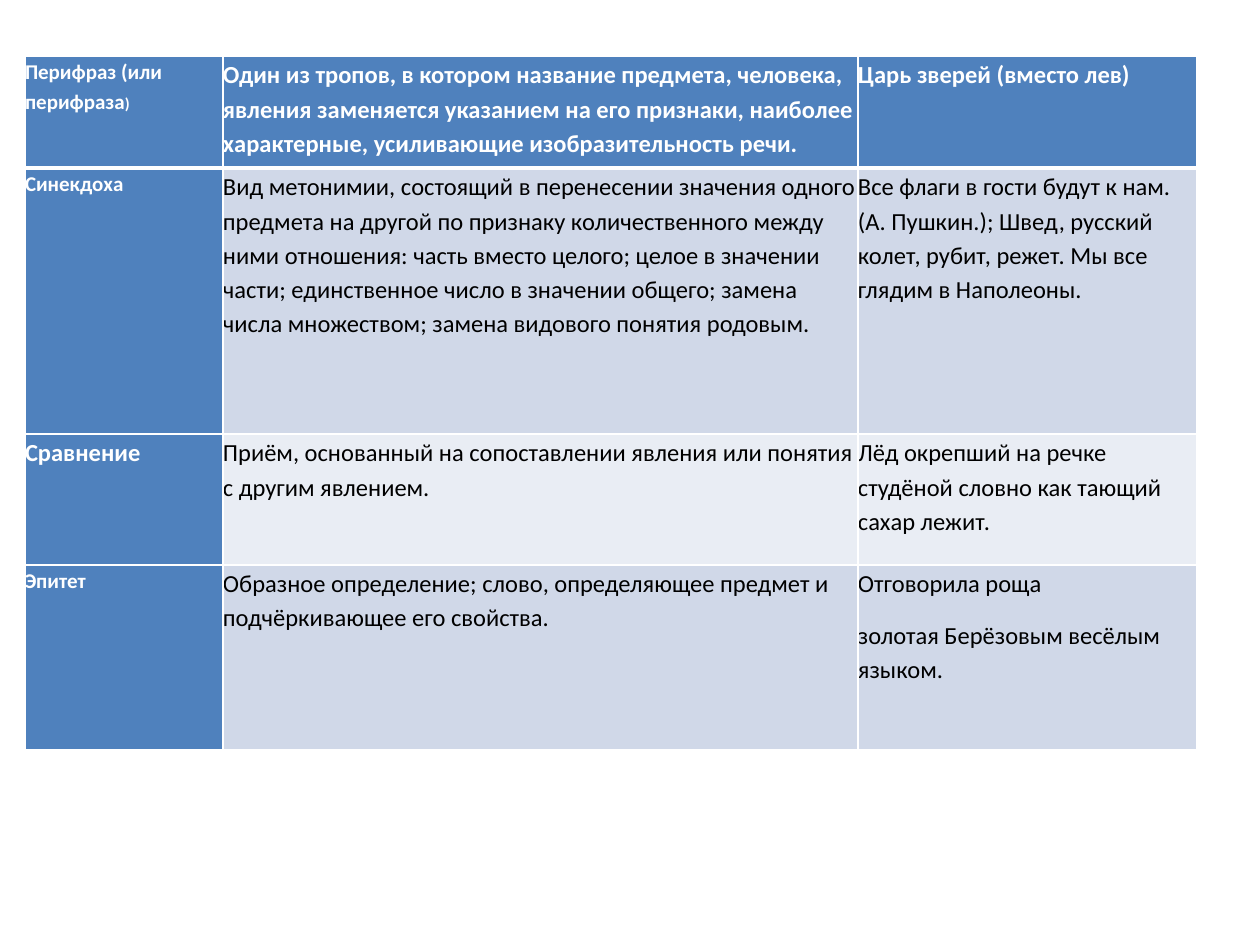
from lxml import etree
from pptx import Presentation
from pptx.dml.color import RGBColor
from pptx.oxml.ns import qn
from pptx.util import Pt

EMU_PER_PX = 914400 / 126
BLANK_LAYOUT = 6
FONT = "Calibri"
COLORS = {
    "accent": "4F81BD",
    "band_dark": "D0D8E8",
    "band_light": "E9EDF4",
    "white": "FFFFFF",
    "black": "000000",
}
COL_WIDTHS = [198, 635, 339]
ROW_HEIGHTS = [112, 266, 131, 185]
TERM_SIZES = [12, 12, 14, 12]
BODY_SIZE = 14
ROWS = [
    [
        "Перифраз (или перифраза)",
        "Один из тропов, в котором название предмета, человека, явления "
        "заменяется указанием на его признаки, наиболее характерные, "
        "усиливающие изобразительность речи.",
        "Царь зверей (вместо лев)",
    ],
    [
        "Синекдоха",
        "Вид метонимии, состоящий в перенесении значения одного предмета "
        "на другой по признаку количественного между ними отношения: часть "
        "вместо целого; целое в значении части; единственное число в значении "
        "общего; замена числа множеством; замена видового понятия родовым.",
        "Все флаги в гости будут к нам. (А. Пушкин.); Швед, русский колет, "
        "рубит, режет. Мы все глядим в Наполеоны.",
    ],
    [
        "Сравнение",
        "Приём, основанный на сопоставлении явления или понятия с другим "
        "явлением.",
        "Лёд окрепший на речке студёной словно как тающий сахар лежит.",
    ],
    [
        "Эпитет",
        "Образное определение; слово, определяющее предмет и подчёркивающее "
        "его свойства.",
        "Отговорила роща\nзолотая Берёзовым весёлым языком.",
    ],
]


def px(n):
    return round(n * EMU_PER_PX)


def rgb(name):
    return RGBColor.from_string(COLORS[name])


class Deck:
    def __init__(self, width, height):
        self.prs = Presentation()
        self.prs.slide_width = px(width)
        self.prs.slide_height = px(height)
        self.s = self.prs.slides.add_slide(self.prs.slide_layouts[BLANK_LAYOUT])

    def format_run(self, r, size, color, bold):
        r.font.name = FONT
        r.font.size = Pt(size)
        r.font.bold = bold
        r.font.color.rgb = rgb(color)

    def border(self, cell, side, width):
        tc_pr = cell._tc.get_or_add_tcPr()
        ln = etree.SubElement(tc_pr, qn(f"a:ln{side}"), w=str(Pt(width)))
        fill = etree.SubElement(ln, qn("a:solidFill"))
        etree.SubElement(fill, qn("a:srgbClr"), val=COLORS["white"])

    def cell(self, cell, text, size, fill, color, bold, top, bottom):
        cell.margin_left = cell.margin_right = 0
        cell.margin_top = cell.margin_bottom = 0
        for side, width in zip("LRTB", (1, 1, top, bottom)):
            self.border(cell, side, width)
        cell.fill.solid()
        cell.fill.fore_color.rgb = rgb(fill)
        cell.text_frame.text = text
        for p in cell.text_frame.paragraphs:
            p.line_spacing = 1.15
            p.space_after = Pt(10)
            for r in p.runs:
                self.format_run(r, size, color, bold)

    def table(self, left, top, rows, widths, heights):
        frame = self.s.shapes.add_table(
            len(rows), len(widths), px(left), px(top),
            px(sum(widths)), px(sum(heights)))
        table = frame.table
        table.first_col = True
        for column, width in zip(table.columns, widths):
            column.width = px(width)
        for i, (row, height) in enumerate(zip(rows, heights)):
            table.rows[i].height = px(height)
            band = "band_dark" if i % 2 else "band_light"
            for j, text in enumerate(row):
                strong = i == 0 or j == 0
                self.cell(
                    table.cell(i, j), text,
                    size=BODY_SIZE if j else TERM_SIZES[i],
                    fill="accent" if strong else band,
                    color="white" if strong else "black",
                    bold=strong,
                    top=3 if i == 1 else 1,
                    bottom=3 if i == 0 else 1)
        return table


def main():
    deck = Deck(1260, 945)
    table = deck.table(25, 56, ROWS, COL_WIDTHS, ROW_HEIGHTS)
    p = table.cell(0, 0).text_frame.paragraphs[0]
    p.runs[0].text = ROWS[0][0][:-1]
    r = p.add_run()
    r.text = ROWS[0][0][-1]
    deck.format_run(r, 9, "white", True)
    deck.prs.save("out.pptx")


if __name__ == "__main__":
    main()
